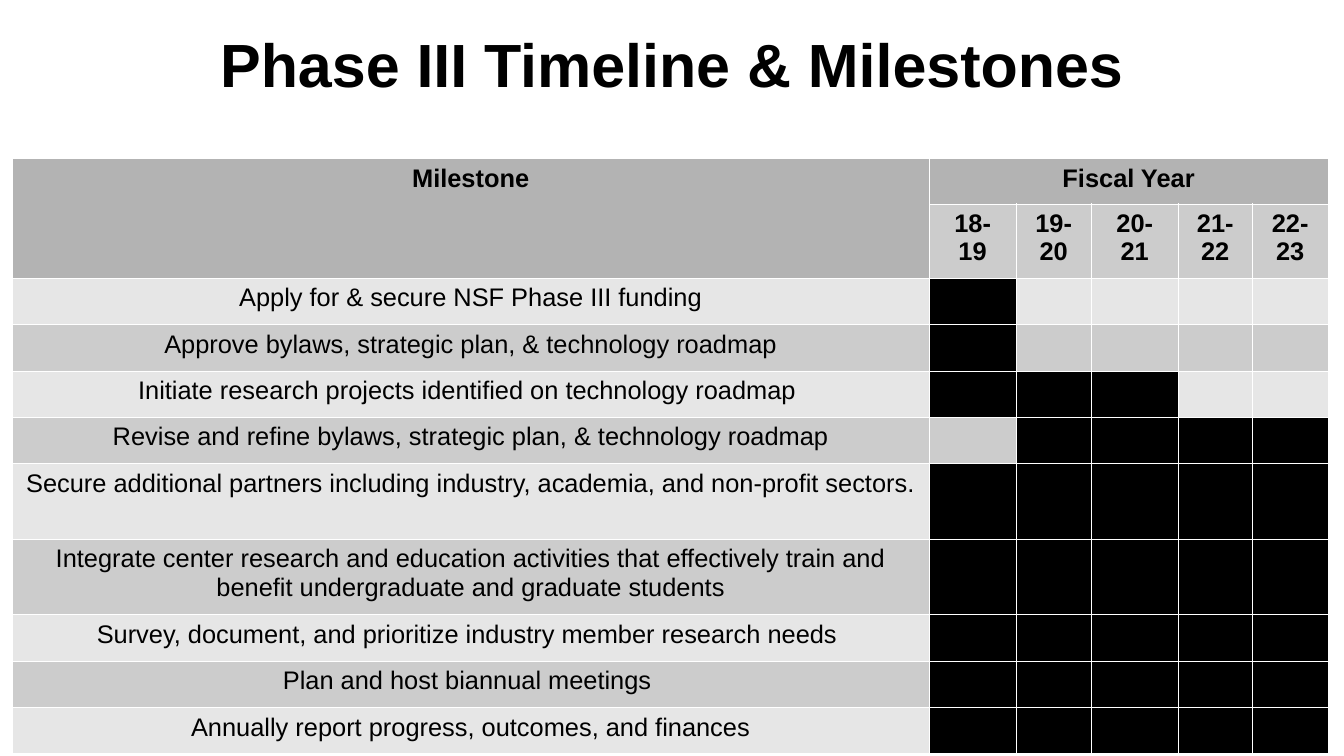
import pptx
import pptx.util
import pptx.dml.color
import pptx.enum.text
import pptx.oxml
import pptx.oxml.ns

Inches, Pt = pptx.util.Inches, pptx.util.Pt
WIDTH, HEIGHT = 11.02, 6.2
COLORS = {"text": "000000", "active": "000000", "head": "B3B3B3",
          "dark": "CCCCCC", "light": "E6E6E6", "border": "FFFFFF"}
YEARS = ["18-19", "19-20", "20-21", "21-22", "22-23"]
# Milestone, first and last active year, height in inches
MILESTONES = [
    ("Apply for & secure NSF Phase III funding", 1, 1, 0.38),
    ("Approve bylaws, strategic plan, & technology roadmap", 1, 1, 0.38),
    ("Initiate research projects identified on technology roadmap ", 1, 3, 0.38),
    ("Revise and refine bylaws, strategic plan, & technology roadmap", 2, 5, 0.38),
    ("Secure additional partners including industry, academia, and "
     "non-profit sectors.", 1, 5, 0.62),
    ("Integrate center research and education activities that effectively train "
     "and benefit undergraduate and graduate students", 1, 5, 0.62),
    ("Survey, document, and prioritize industry member research needs ", 1, 5, 0.38),
    ("Plan and host biannual meetings ", 1, 5, 0.38),
    ("Annually report progress, outcomes, and finances", 1, 5, 0.38),
]
COLUMNS = [7.52, 0.71, 0.62, 0.71, 0.61, 0.62]
ROWS = [0.37, 0.61] + [height for *_, height in MILESTONES]


def rgb(name):
    return pptx.dml.color.RGBColor.from_string(COLORS[name])


def write(tf, text, size, bold):
    p = tf.paragraphs[0]
    p.alignment = pptx.enum.text.PP_ALIGN.CENTER
    r = p.add_run()
    r.text = text
    for name, value in {"name": "Arial", "size": Pt(size), "bold": bold}.items():
        setattr(r.font, name, value)
    r.font.color.rgb = rgb("text")


def add_title(s, box, text):
    title = s.shapes.title
    for name, value in zip(("left", "top", "width", "height"), box):
        setattr(title, name, Inches(value))
    tf = title.text_frame
    for side in ("left", "top", "right", "bottom"):
        setattr(tf, f"margin_{side}", 0)
    tf.word_wrap = True
    tf.vertical_anchor = pptx.enum.text.MSO_ANCHOR.MIDDLE
    write(tf, text, 36, True)


def style_cell(cell, fill):
    # Borders come before the fill in the cell properties
    tcPr = cell._tc.get_or_add_tcPr()
    for side in ("lnL", "lnR", "lnT", "lnB"):
        tcPr.append(pptx.oxml.parse_xml(
            f'<a:{side} {pptx.oxml.ns.nsdecls("a")} w="762"><a:solidFill>'
            f'<a:srgbClr val="{COLORS["border"]}"/></a:solidFill></a:{side}>'))
    cell.fill.solid()
    cell.fill.fore_color.rgb = rgb(fill)


def add_timeline(s, box):
    frame = s.shapes.add_table(len(ROWS), len(COLUMNS), *map(Inches, box))
    table = frame.table
    table.first_row = table.horz_banding = False
    for column, width in zip(table.columns, COLUMNS):
        column.width = Inches(width)
    for row, height in zip(table.rows, ROWS):
        row.height = Inches(height)

    # Two header rows
    for i in range(len(COLUMNS)):
        style_cell(table.cell(0, i), "head")
        style_cell(table.cell(1, i), "dark" if i else "head")
    table.cell(0, 0).merge(table.cell(1, 0))
    table.cell(0, 1).merge(table.cell(0, len(YEARS)))
    write(table.cell(0, 0).text_frame, "Milestone", 15, True)
    write(table.cell(0, 1).text_frame, "Fiscal Year", 15, True)
    for i, year in enumerate(YEARS, 1):
        write(table.cell(1, i).text_frame, year, 15, True)

    # Milestones with their active years
    for n, (text, first, last, _) in enumerate(MILESTONES, 2):
        band = "dark" if n % 2 else "light"
        style_cell(table.cell(n, 0), band)
        write(table.cell(n, 0).text_frame, text, 15, False)
        for i in range(1, len(COLUMNS)):
            cell = table.cell(n, i)
            # No margins, so that empty cells do not stretch the row
            cell.margin_top = cell.margin_bottom = 0
            style_cell(cell, "active" if first <= i <= last else band)


def main():
    prs = pptx.Presentation()
    prs.slide_width, prs.slide_height = Inches(WIDTH), Inches(HEIGHT)
    s = prs.slides.add_slide(prs.slide_layouts[5])
    add_title(s, (WIDTH * 0.05, 0, WIDTH * 0.9, HEIGHT / 6), "Phase III Timeline & Milestones")
    add_timeline(s, (0.1, 1.3, sum(COLUMNS), sum(ROWS)))
    prs.save("out.pptx")


if __name__ == "__main__":
    main()
